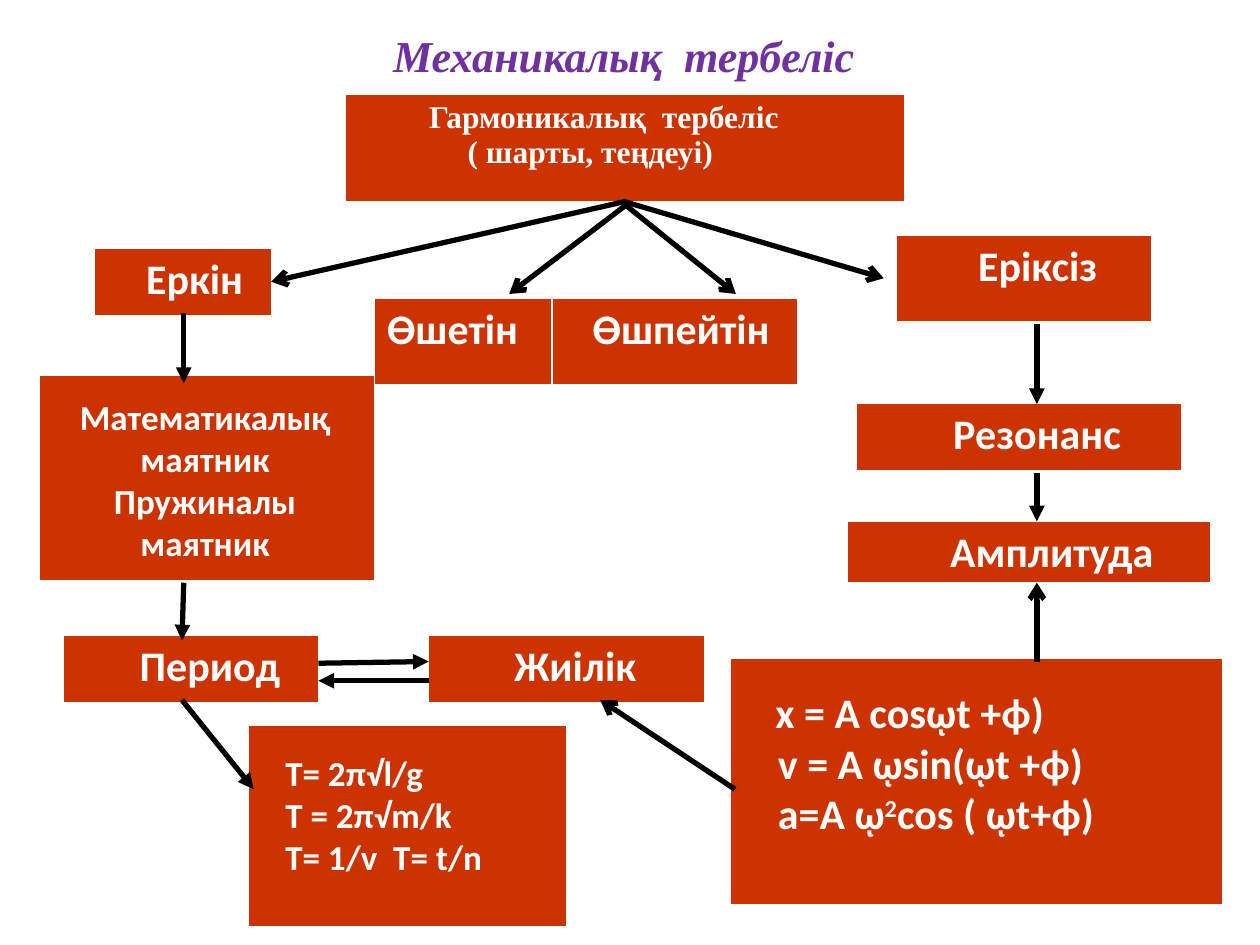
from lxml import etree
from pptx import Presentation
from pptx import util as u
from pptx.dml.color import RGBColor
from pptx.enum import shapes, text
from pptx.oxml.ns import qn

Pt = u.Pt
RED, WHITE, BLACK, PURPLE = "CC3300", "FFFFFF", "000000", "7030A0"
LEFT, CENTER = text.PP_ALIGN.LEFT, text.PP_ALIGN.CENTER


def rgb(value):
    return RGBColor.from_string(value)


def add_run(p, value, size, color=WHITE, font="Calibri", italic=False, raised=False):
    r = p.add_run()
    r.text = value
    r.font.size, r.font.name = Pt(size), font
    r.font.bold, r.font.italic = True, italic
    r.font.color.rgb = rgb(color)
    if raised:
        r.font._element.set("baseline", "30000")


def add_lines(tf, lines, size, align=LEFT, **style):
    """Each line is (indent, piece, ...); every second piece is superscript."""
    for i, (indent, *pieces) in enumerate(lines):
        p = tf.paragraphs[0] if i == 0 else tf.add_paragraph()
        p.alignment = align
        p._p.get_or_add_pPr().set("marL", str(Pt(indent)))
        for j, piece in enumerate(pieces):
            add_run(p, piece, size, raised=j % 2 == 1, **style)


def add_text(s, x, y, w, h, lines, size, align=LEFT, anchor=text.MSO_ANCHOR.TOP, **style):
    tf = s.shapes.add_textbox(Pt(x), Pt(y), Pt(w), Pt(h)).text_frame
    tf.word_wrap = True
    tf.vertical_anchor = anchor
    add_lines(tf, lines, size, align, **style)


def add_borders(cell):
    tcPr = cell._tc.get_or_add_tcPr()
    for side, width in (("L", 1), ("R", 1), ("T", 1), ("B", 3)):
        ln = etree.SubElement(tcPr, qn(f"a:ln{side}"), w=str(Pt(width)))
        fill = etree.SubElement(ln, qn("a:solidFill"))
        etree.SubElement(fill, qn("a:srgbClr"), val=WHITE)


def add_box(s, x, y, widths, h, cells=((),), size=24, align=LEFT, **style):
    """One-row table; cells holds the lines of each column."""
    frame = s.shapes.add_table(1, len(widths), Pt(x), Pt(y), Pt(sum(widths)), Pt(h))
    table = frame.table
    table.rows[0].height = Pt(h)
    for i, (width, lines) in enumerate(zip(widths, cells)):
        table.columns[i].width = Pt(width)
        cell = table.cell(0, i)
        add_borders(cell)
        cell.fill.solid()
        cell.fill.fore_color.rgb = rgb(RED)
        add_lines(cell.text_frame, lines, size, align, **style)


def add_arrow(s, x1, y1, x2, y2, head):
    c = s.shapes.add_connector(shapes.MSO_CONNECTOR.STRAIGHT, Pt(x1), Pt(y1), Pt(x2), Pt(y2))
    c.line.color.rgb = rgb(BLACK)
    c.line.width = Pt(3)
    etree.SubElement(c.line._get_or_add_ln(), qn("a:tailEnd"), type=head)
    etree.SubElement(c._element.spPr, qn("a:effectLst"))


def main():
    prs = Presentation()
    prs.slide_width, prs.slide_height = Pt(720), Pt(540)
    s = prs.slides.add_slide(prs.slide_layouts[6])

    # Title and main topic
    add_text(s, 182, 4, 349, 55, [(0, "Механикалық  тербеліс")], 25.2, CENTER,
             text.MSO_ANCHOR.MIDDLE, color=PURPLE, font="Times New Roman", italic=True)
    add_box(s, 197, 54, [320], 62,
            [[(41, "Гармоникалық  тербеліс"), (63, "( шарты, теңдеуі)")]],
            size=18, font="Times New Roman")

    # Concept boxes: x, y, width, height, indent, label, alignment
    concepts = [
        (54, 142, 101.5, 39.6, 13, "Еркін", CENTER),
        (36, 363, 146, 39.6, 22, "Период", CENTER),
        (245, 363, 157.5, 39.6, 10, "Жиілік", CENTER),
        (484, 298, 208, 36, 26, "Амплитуда", CENTER),
        (512, 134.5, 146, 50.4, 16, "Еріксіз", CENTER),
        (489.5, 230.5, 186, 39.6, 48, "Резонанс", LEFT),
    ]
    for x, y, w, h, indent, label, align in concepts:
        add_box(s, x, y, [w], h, [[(indent, label)]], align=align)
    add_box(s, 214, 170.5, [101.5, 140.5], 50.4, [[(0, "Өшетін")], [(16, "Өшпейтін")]])

    # Panels behind the pendulums and the formulas
    add_box(s, 22.5, 214.5, [191.5], 118)
    add_box(s, 142, 414.5, [182], 116)
    add_box(s, 417, 376, [281.5], 142)

    # Arrows with open heads
    for ends in [(356, 116, 420.5, 168), (358, 117, 291, 168), (356, 115, 505, 159),
                 (358, 115, 155, 161), (420, 451, 343, 400), (592.5, 378, 592.5, 333)]:
        add_arrow(s, *ends, "arrow")

    # Arrows with solid heads
    for ends in [(105, 179, 105, 219), (592.5, 185, 592.5, 231), (592.5, 270, 592.5, 298),
                 (182, 379, 245, 378), (245, 389, 182, 389), (104, 400, 145, 451),
                 (105, 333, 104, 366)]:
        add_arrow(s, *ends, "triangle")

    # Panel texts
    add_text(s, 33, 222.5, 168.5, 104,
             [(0, "Математикалық"), (0, "маятник"), (0, "Пружиналы маятник")], 20, CENTER)
    add_text(s, 156, 426, 144, 80,
             [(0, "Т= 2π√l/g"), (0, "T = 2π√m/k"), (0, "T= 1/v  T= t/n")], 20)
    add_text(s, 432, 389, 257, 119,
             [(4, "x = A cosῳt +ϕ)"), (5.5, "v = A ῳsin(ῳt +ϕ)"),
              (5.5, "a=A ῳ", "2", "cos ( ῳt+ϕ)")], 24)

    prs.save("out.pptx")


if __name__ == "__main__":
    main()
